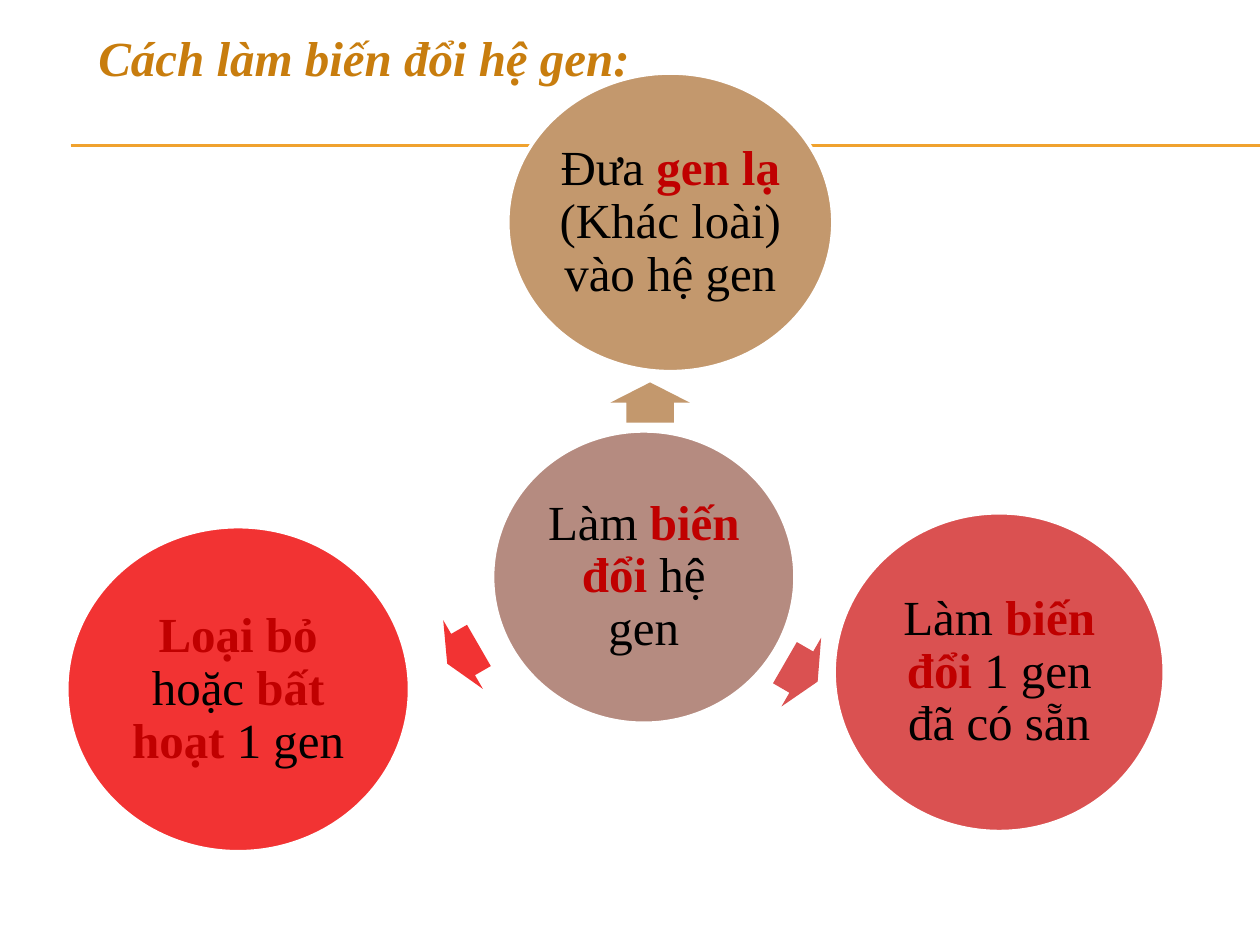
from dataclasses import dataclass

import pptx
import pptx.dml.color
import pptx.enum.shapes
import pptx.enum.text
import pptx.oxml.ns
import pptx.util
from lxml import etree

SLIDE_WIDTH = pptx.util.Inches(10)
SLIDE_HEIGHT = pptx.util.Inches(7.5)
COLUMNS, ROWS = 100, 75


@dataclass(frozen=True)
class Theme:
    font: str = "Times New Roman"
    text_size: float = 28
    rule_width: float = 0.75
    outline_width: float = 2
    title: str = "C87D0E"
    rule: str = "F0A22E"
    text: str = "000000"
    emphasis: str = "C00000"
    outline: str = "FFFFFF"
    hub: str = "B58B80"
    insert: str = "C3986D"
    modify: str = "DA5151"
    remove: str = "F23333"


THEME = Theme()


def across(columns):
    return round(SLIDE_WIDTH * columns / COLUMNS)


def down(rows):
    return round(SLIDE_HEIGHT * rows / ROWS)


def rgb(value):
    return pptx.dml.color.RGBColor.from_string(value)


def add_text(paragraph, text, *, color=THEME.text, bold=False, italic=False):
    run = paragraph.add_run()
    run.text = text
    run.font.name = THEME.font
    run.font.size = pptx.util.Pt(THEME.text_size)
    run.font.color.rgb = rgb(color)
    run.font.bold = bold
    run.font.italic = italic


def set_title(slide, text):
    title = slide.shapes.title
    title.left, title.top = across(5.8), down(1.7)
    title.width, title.height = across(47.8), down(5.7)
    frame = title.text_frame
    frame.word_wrap = False
    frame.auto_size = pptx.enum.text.MSO_AUTO_SIZE.NONE
    frame.vertical_anchor = pptx.enum.text.MSO_ANCHOR.TOP
    frame.margin_left = across(2)
    paragraph = frame.paragraphs[0]
    paragraph.alignment = pptx.enum.text.PP_ALIGN.LEFT
    add_text(paragraph, text, color=THEME.title, bold=True, italic=True)


def add_rule(slide, row):
    rule = slide.shapes.add_connector(
        pptx.enum.shapes.MSO_CONNECTOR.STRAIGHT,
        across(5.6), down(row), across(COLUMNS), down(row))
    rule.line.color.rgb = rgb(THEME.rule)
    rule.line.width = pptx.util.Pt(THEME.rule_width)
    properties = rule._element.spPr
    etree.SubElement(properties, pptx.oxml.ns.qn("a:effectLst"))


def add_filled_shape(slide, kind, box, color):
    left, top, width, height = box
    shape = slide.shapes.add_shape(
        kind, across(left), down(top), across(width), down(height))
    shape.shadow.inherit = False
    shape.fill.solid()
    shape.fill.fore_color.rgb = rgb(color)
    return shape


def add_circle(slide, box, color, phrases):
    """Draw a labelled ellipse; phrases are (text, is_emphasised) pairs."""
    circle = add_filled_shape(
        slide, pptx.enum.shapes.MSO_SHAPE.OVAL, box, color)
    circle.line.color.rgb = rgb(THEME.outline)
    circle.line.width = pptx.util.Pt(THEME.outline_width)
    frame = circle.text_frame
    frame.word_wrap = True
    frame.vertical_anchor = pptx.enum.text.MSO_ANCHOR.MIDDLE
    frame.margin_left = frame.margin_right = across(0.3)
    frame.margin_top = frame.margin_bottom = down(0.3)
    paragraph = frame.paragraphs[0]
    paragraph.alignment = pptx.enum.text.PP_ALIGN.CENTER
    paragraph.line_spacing = 0.9
    for text, emphasised in phrases:
        add_text(paragraph, text, bold=emphasised,
                 color=THEME.emphasis if emphasised else THEME.text)


def add_arrow(slide, box, color, rotation):
    arrow = add_filled_shape(
        slide, pptx.enum.shapes.MSO_SHAPE.RIGHT_ARROW, box, color)
    arrow.line.fill.background()
    arrow.adjustments[0] = 0.6
    arrow.adjustments[1] = 0.5
    arrow.rotation = rotation


def main():
    presentation = pptx.Presentation()
    presentation.slide_width = SLIDE_WIDTH
    presentation.slide_height = SLIDE_HEIGHT
    slide = presentation.slides.add_slide(presentation.slide_layouts[5])

    for row in (11.5, 11.6):
        add_rule(slide, row)
    set_title(slide, "Cách làm biến đổi hệ gen:")

    add_circle(slide, (39.1, 34.2, 24, 23.2), THEME.hub,
               [("Làm ", False), ("biến đổi ", True), ("hệ gen", False)])

    branches = [
        (THEME.insert, (50, 28.8, 3.2, 6.3), 270, (40.3, 5.8, 25.8, 23.7),
         [("Đưa ", False), ("gen lạ ", True),
          ("(Khác loài) vào hệ gen", False)]),
        (THEME.modify, (62.1, 50.2, 3, 6.3), 30, (66.2, 40.7, 26.2, 25.3),
         [("Làm ", False), ("biến đổi ", True), ("1 gen đã có sẵn", False)]),
        (THEME.remove, (35.3, 48.8, 2.9, 6.3), 150, (5.3, 41.8, 27.2, 25.8),
         [("Loại bỏ ", True), ("hoặc ", False),
          ("bất hoạt ", True), ("1 gen", False)]),
    ]
    for color, arrow_box, rotation, circle_box, phrases in branches:
        add_arrow(slide, arrow_box, color, rotation)
        add_circle(slide, circle_box, color, phrases)

    presentation.save("out.pptx")


if __name__ == "__main__":
    main()
